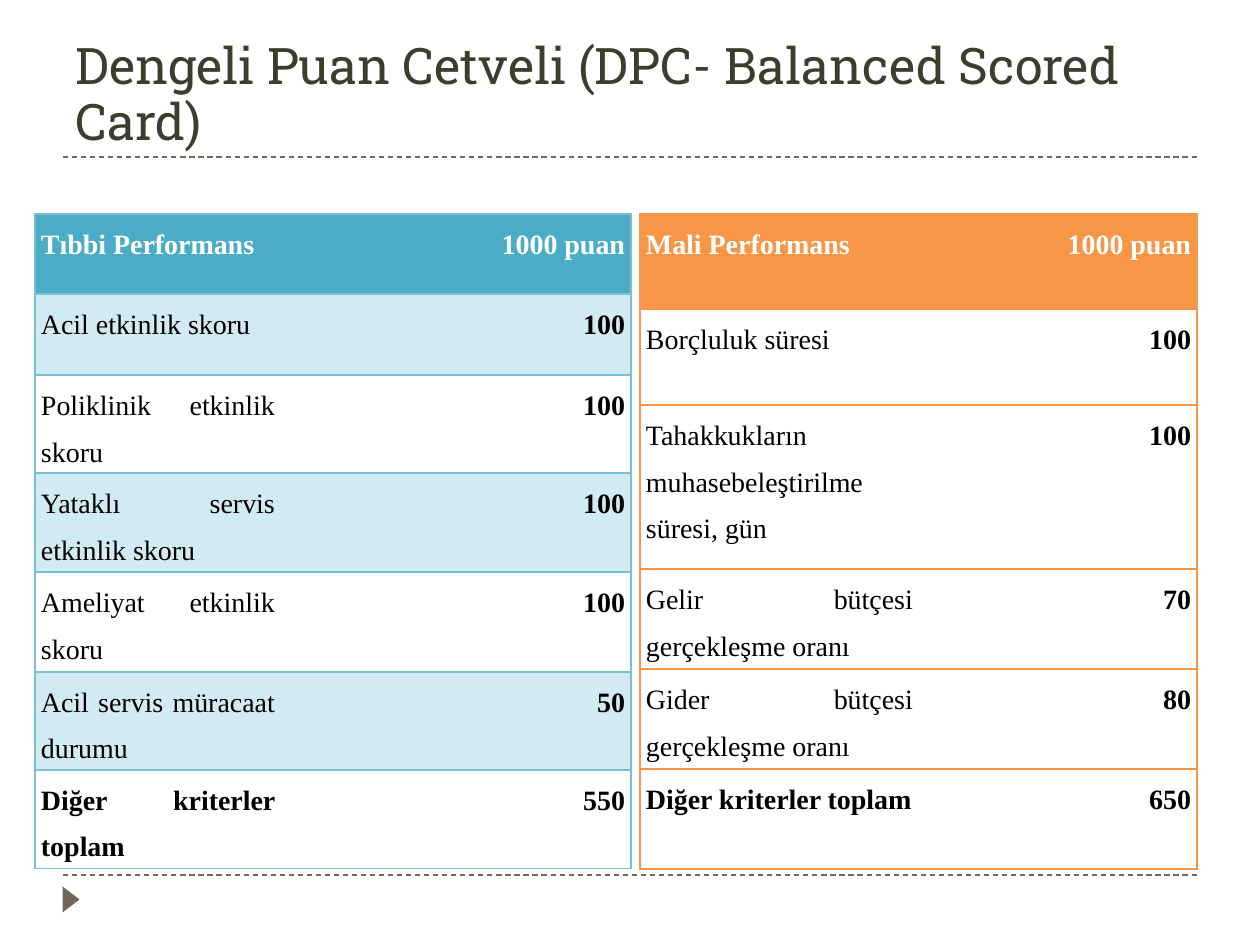
import pptx
import pptx.util
import pptx.dml.color
import pptx.enum.dml
import pptx.enum.shapes
import pptx.enum.text
import pptx.oxml
import pptx.oxml.ns

RGB = pptx.dml.color.RGBColor
ALIGN = pptx.enum.text.PP_ALIGN
ANCHOR = pptx.enum.text.MSO_ANCHOR
SHAPE = pptx.enum.shapes.MSO_SHAPE

WHITE = RGB(0xFF, 0xFF, 0xFF)
BLACK = RGB(0, 0, 0)
TITLE_COLOR = RGB(0x3E, 0x3D, 0x2D)
RULE_COLOR = RGB(0x71, 0x68, 0x5A)
TEAL = RGB(0x4B, 0xAC, 0xC6)
TEAL_LINE = RGB(0x78, 0xC0, 0xD4)
TEAL_BAND = RGB(0xD2, 0xEA, 0xF1)
ORANGE = RGB(0xF7, 0x96, 0x46)

TITLE = "Dengeli Puan Cetveli (DPC- Balanced Scored Card)"
SCORE_TABLES = [
    {
        "left": 35, "columns": [246, 350],
        "heights": [80, 81, 98, 99, 100, 98, 99],
        "header": TEAL, "line": TEAL_LINE, "band": TEAL_BAND,
        "rows": [
            ("Tıbbi Performans", "1000 puan"),
            ("Acil etkinlik skoru", "100"),
            ("Poliklinik etkinlik skoru", "100"),
            ("Yataklı servis etkinlik skoru", "100"),
            ("Ameliyat etkinlik skoru", "100"),
            ("Acil servis müracaat durumu", "50"),
            ("Diğer kriterler toplam", "550"),
        ],
    },
    {
        "left": 640, "columns": [279, 278],
        "heights": [95, 96, 164, 100, 100, 100],
        "header": ORANGE, "line": ORANGE, "band": None,
        "rows": [
            ("Mali Performans", "1000 puan"),
            ("Borçluluk süresi", "100"),
            ("Tahakkukların muhasebeleştirilme süresi, gün", "100"),
            ("Gelir bütçesi gerçekleşme oranı", "70"),
            ("Gider bütçesi gerçekleşme oranı", "80"),
            ("Diğer kriterler toplam", "650"),
        ],
    },
]
TABLE_TOP = 214
RULE_LEFT, RULE_RIGHT = 63, 1197
RULE_TOPS = [157, 875]


def px(count):
    return pptx.util.Emu(round(count * 914400 / 126))


def add_run(para, text, font_name, size, color, bold=False):
    span = para.add_run()
    span.text = text
    span.font.name = font_name
    span.font.size = pptx.util.Pt(size)
    span.font.color.rgb = color
    span.font.bold = bold


def add_rule(page, top):
    rule = page.shapes.add_connector(
        pptx.enum.shapes.MSO_CONNECTOR.STRAIGHT,
        px(RULE_LEFT), px(top), px(RULE_RIGHT), px(top))
    rule.line.color.rgb = RULE_COLOR
    rule.line.width = pptx.util.Pt(0.75)
    rule.line.dash_style = pptx.enum.dml.MSO_LINE.DASH
    properties = rule._element.spPr
    properties.append(pptx.oxml.parse_xml(
        f'<a:effectLst {pptx.oxml.ns.nsdecls("a")}/>'))


def set_borders(cell, color, sides):
    properties = cell._tc.get_or_add_tcPr()
    for side in "LRTB":
        paint = (f'<a:solidFill><a:srgbClr val="{color}"/></a:solidFill>'
                 if side in sides else "<a:noFill/>")
        properties.append(pptx.oxml.parse_xml(
            f'<a:ln{side} {pptx.oxml.ns.nsdecls("a")} w="12700">{paint}</a:ln{side}>'))


def add_score_table(page, content):
    rows, widths, heights = content["rows"], content["columns"], content["heights"]
    table = page.shapes.add_table(
        len(rows), len(widths), px(content["left"]), px(TABLE_TOP),
        px(sum(widths)), px(sum(heights))).table
    table.first_row = table.horz_banding = False
    for column, width in zip(table.columns, widths):
        column.width = px(width)
    for row, height in zip(table.rows, heights):
        row.height = px(height)

    for i, texts in enumerate(rows):
        is_header = i == 0
        is_total = i == len(rows) - 1
        fill = content["header"] if is_header else content["band"] if i % 2 else None
        for j, text in enumerate(texts):
            cell = table.cell(i, j)
            cell.margin_left = cell.margin_right = px(6)
            cell.margin_top = cell.margin_bottom = 0
            set_borders(cell, content["line"], "TBR" if j else "TBL")
            if fill is None:
                cell.fill.background()
            else:
                cell.fill.solid()
                cell.fill.fore_color.rgb = fill
            para = cell.text_frame.paragraphs[0]
            para.alignment = ALIGN.RIGHT if j else ALIGN.JUSTIFY
            para.line_spacing = 1.5
            para.space_before = pptx.util.Pt(12)
            para.space_after = pptx.util.Pt(6)
            add_run(para, text, "Times New Roman", 16,
                    WHITE if is_header else BLACK,
                    bold=is_header or is_total or j == 1)


def add_title(page):
    title = page.shapes.title
    title.left, title.top, title.width, title.height = px(63), px(32), px(1134), px(126)
    frame = title.text_frame
    frame.word_wrap = True
    frame.auto_size = pptx.enum.text.MSO_AUTO_SIZE.NONE
    frame.vertical_anchor = ANCHOR.BOTTOM
    para = frame.paragraphs[0]
    para.alignment = ALIGN.LEFT
    para.line_spacing = 0.93
    add_run(para, TITLE, "Roboto Slab", 28.8, TITLE_COLOR)


def add_marker(page):
    marker = page.shapes.add_shape(
        SHAPE.ISOSCELES_TRIANGLE, px(58), px(891), px(26), px(17))
    marker.rotation = 90
    marker.shadow.inherit = False
    marker.fill.solid()
    marker.fill.fore_color.rgb = RULE_COLOR
    marker.line.fill.background()


def main():
    deck = pptx.Presentation()
    deck.slide_width, deck.slide_height = px(1260), px(945)
    page = deck.slides.add_slide(deck.slide_layouts.get_by_name("Title Only"))
    for top in RULE_TOPS:
        add_rule(page, top)
    add_marker(page)
    add_title(page)
    for content in SCORE_TABLES:
        add_score_table(page, content)
    deck.save("out.pptx")


if __name__ == "__main__":
    main()
